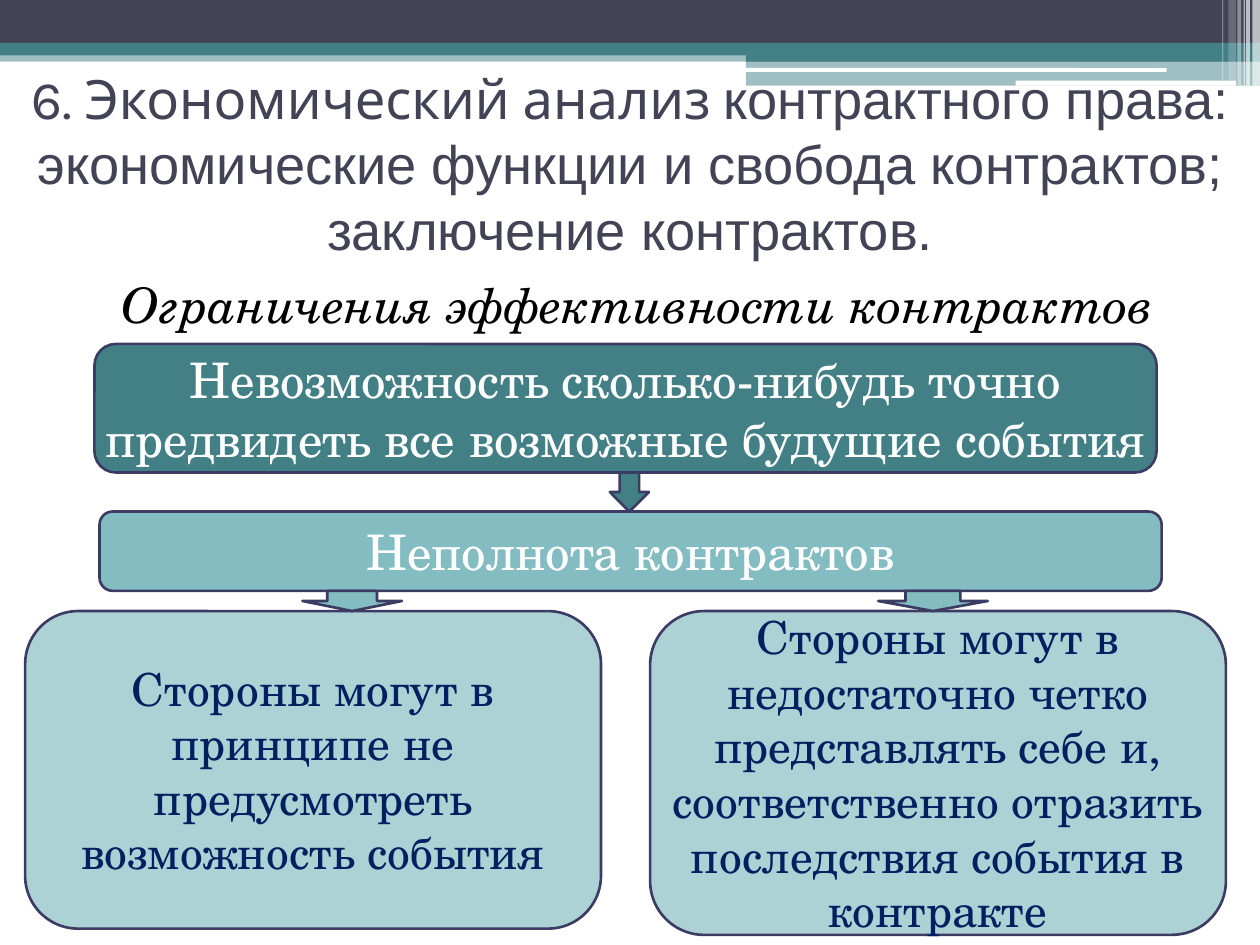
from dataclasses import dataclass

from lxml import etree
from pptx import Presentation
from pptx.dml.color import RGBColor
from pptx.enum import shapes, text
from pptx.oxml import ns
from pptx.util import Inches, Pt


@dataclass(frozen=True)
class Theme:
    dark: str = "424456"
    teal: str = "438086"
    mid: str = "83BCC1"
    pale: str = "ADD2D6"
    outline: str = "3B3B64"
    navy: str = "002060"
    white: str = "FFFFFF"
    black: str = "000000"
    serif: str = "TeX Gyre Schola"
    title_size: int = 31
    large: int = 28
    small: int = 26


theme = Theme()
kinds = shapes.MSO_SHAPE


def add_block(kind, box, color, outlined=False, alpha=100):
    sp = s.shapes.add_shape(kind, *map(Inches, box))
    sp.shadow.inherit = False
    sp.fill.solid()
    sp.fill.fore_color.rgb = RGBColor.from_string(color)
    if alpha < 100:
        clr = sp.fill._xPr.find(".//" + ns.qn("a:srgbClr"))
        etree.SubElement(clr, ns.qn("a:alpha"), val=str(alpha * 1000))
    if outlined:
        sp.line.color.rgb = RGBColor.from_string(theme.outline)
        sp.line.width = Pt(1.5)
    else:
        sp.line.fill.background()
    return sp


def format_run(r, font, size, color):
    r.font.name = font
    r.font.size = Pt(size)
    r.font.color.rgb = RGBColor.from_string(color)


prs = Presentation()
prs.slide_width, prs.slide_height = Inches(10), Inches(7.5)
s = prs.slides.add_slide(prs.slide_layouts[5])

bands = [
    ((0, 0.4, 10, 0.09), theme.teal, 50),
    ((0, 0, 10, 0.34), theme.dark, 100),
    ((0, 0.34, 10, 0.1), theme.teal, 100),
    ((5.92, 0.39, 4.08, 0.1), theme.teal, 100),
    ((5.92, 0.48, 4.08, 0.2), theme.teal, 50),
]
for box, color, alpha in bands:
    add_block(kinds.RECTANGLE, box, color, alpha=alpha)

for box in [(5.91, 0.54, 3.35, 0.03), (8.06, 0.64, 1.75, 0.04)]:
    add_block(kinds.ROUNDED_RECTANGLE, box, theme.white)

stripes = [
    (9.94, 0.06, 0.68, 65),
    (9.89, 0.03, 0.68, 65),
    (9.87, 0.01, 0.68, 60),
    (9.82, 0.03, 0.68, 40),
    (9.75, 0.06, 0.64, 20),
    (9.7, 0.01, 0.64, 30),
]
for left, width, height, alpha in stripes:
    add_block(kinds.RECTANGLE, (left, 0, width, height), theme.white, alpha=alpha)

sp = s.shapes.add_textbox(Inches(0), Inches(2.18), Inches(10), Inches(0.55))
tf = sp.text_frame
tf.word_wrap = True
tf.text = "Ограничения эффективности контрактов"
p = tf.paragraphs[0]
p.alignment = text.PP_ALIGN.CENTER
p.line_spacing = 0.9
p.space_before = Pt(12)
pPr = p._p.get_or_add_pPr()
pPr.set("marL", str(Inches(0.7)))
pPr.set("indent", str(Inches(-0.58)))
format_run(p.runs[0], theme.serif, theme.large, theme.black)
p.runs[0].font.italic = True

title = s.shapes.title
title.left, title.top = Inches(0), Inches(0.47)
title.width, title.height = Inches(10), Inches(1.55)
tf = title.text_frame
tf.word_wrap = True
tf.auto_size = text.MSO_AUTO_SIZE.NONE
tf.vertical_anchor = text.MSO_ANCHOR.TOP
p = tf.paragraphs[0]
p.alignment = text.PP_ALIGN.CENTER
title_parts = [
    ("6. Экономический анализ ", "Karla"),
    ("контрактного права: экономические функции и свобода контрактов; "
     "заключение контрактов.", "Arial"),
]
for words, font in title_parts:
    r = p.add_run()
    r.text = words
    format_run(r, font, theme.title_size, theme.dark)
s.shapes._spTree.append(title._element)

boxes = [
    ((0.75, 2.73, 8.43, 1.02), theme.teal, theme.large, theme.white,
     "Невозможность сколько-нибудь точно предвидеть все возможные будущие события"),
    ((0.79, 4.06, 8.43, 0.63), theme.mid, theme.large, theme.white,
     "Неполнота контрактов"),
    ((0.2, 4.85, 4.57, 2.52), theme.pale, theme.small, theme.navy,
     "Стороны могут в принципе не предусмотреть возможность события"),
    ((5.16, 4.85, 4.57, 2.57), theme.pale, theme.small, theme.navy,
     "Стороны могут в недостаточно четко представлять себе и, "
     "соответственно отразить последствия события в контракте"),
]
for box, fill, size, color, words in boxes:
    sp = add_block(kinds.ROUNDED_RECTANGLE, box, fill, outlined=True)
    tf = sp.text_frame
    tf.word_wrap = True
    tf.margin_left = tf.margin_right = Inches(0)
    tf.vertical_anchor = text.MSO_ANCHOR.MIDDLE
    tf.text = words
    p = tf.paragraphs[0]
    p.alignment = text.PP_ALIGN.CENTER
    format_run(p.runs[0], theme.serif, size, color)

arrows = [
    ((4.84, 3.75, 0.31, 0.31), theme.teal),
    ((2.4, 4.69, 0.79, 0.16), theme.mid),
    ((6.97, 4.69, 0.87, 0.16), theme.mid),
]
for box, color in arrows:
    add_block(kinds.DOWN_ARROW, box, color, outlined=True)

prs.save("out.pptx")
